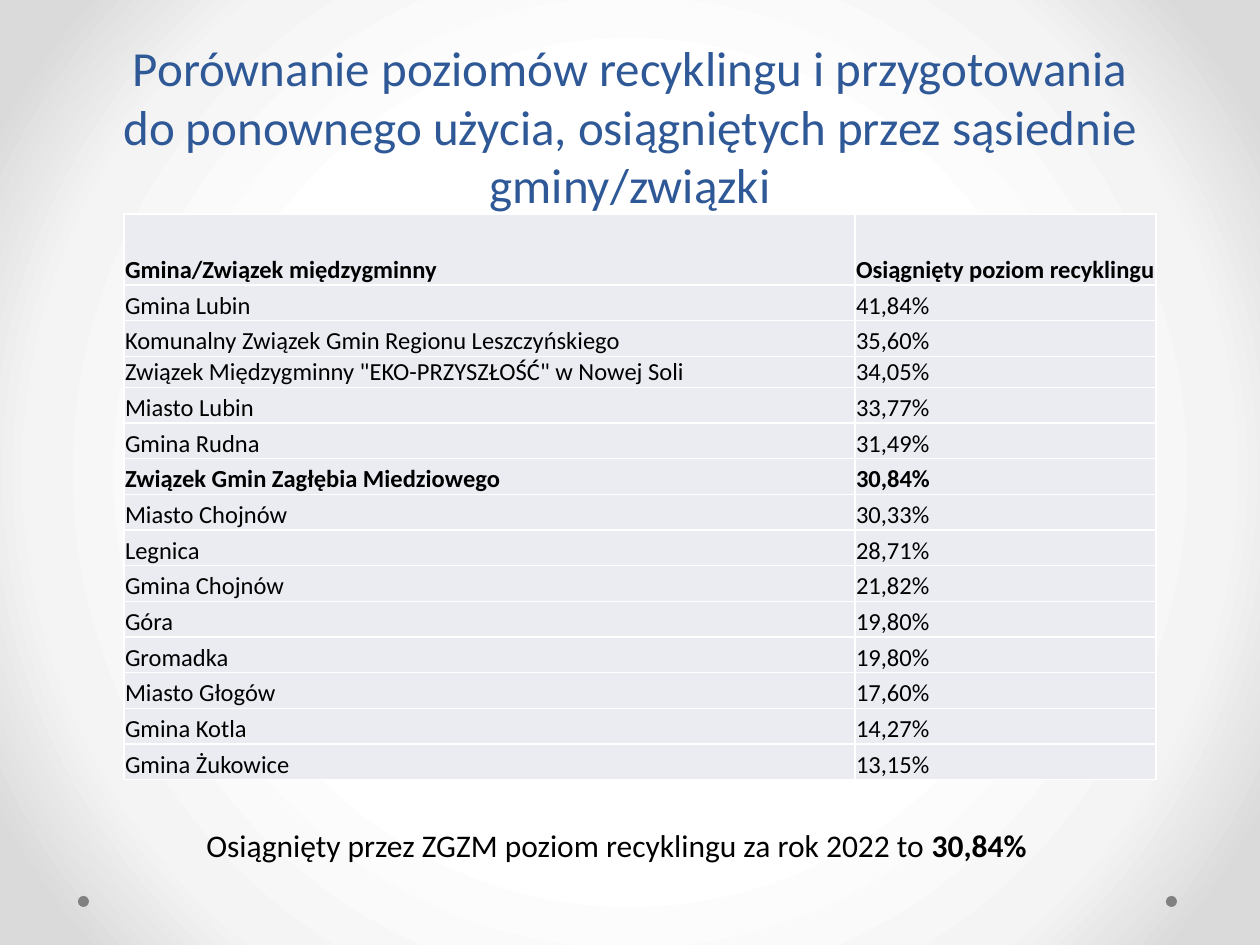
from lxml import etree
from pptx import Presentation
from pptx.dml.color import RGBColor
from pptx.enum.shapes import MSO_SHAPE
from pptx.enum.text import MSO_ANCHOR, PP_ALIGN
from pptx.oxml import parse_xml
from pptx.oxml.ns import nsdecls, qn
from pptx.util import Emu, Pt

OVAL = MSO_SHAPE.OVAL
BOTTOM = MSO_ANCHOR.BOTTOM
CENTER = PP_ALIGN.CENTER

WHITE = RGBColor(0xFF, 0xFF, 0xFF)
LIGHT_GRAY = RGBColor(0xF4, 0xF4, 0xF4)
EDGE_GRAY = RGBColor(0xDA, 0xDA, 0xDA)
DOT_GRAY = RGBColor(0x80, 0x80, 0x80)
BLUE = RGBColor(0x2F, 0x58, 0x97)
BLACK = RGBColor(0x00, 0x00, 0x00)
CELL_FILL = RGBColor(0xEA, 0xEC, 0xF2)

FONT = "Calibri"
EMU_PER_PX = 914400 / 126
GRADIENT = ((50, WHITE), (76, LIGHT_GRAY), (92, EDGE_GRAY))

TITLE_LINES = (
    "Porównanie poziomów recyklingu i przygotowania",
    "do ponownego użycia, osiągniętych przez sąsiednie gminy/związki",
)
HEADER = ("Gmina/Związek międzygminny", "Osiągnięty poziom recyklingu")
OWN_UNION = "Związek Gmin Zagłębia Miedziowego"
OWN_LEVEL = "30,84%"
RESULTS = (
    ("Gmina Lubin", "41,84%"),
    ("Komunalny Związek Gmin Regionu Leszczyńskiego", "35,60%"),
    ('Związek Międzygminny "EKO-PRZYSZŁOŚĆ" w Nowej Soli', "34,05%"),
    ("Miasto Lubin", "33,77%"),
    ("Gmina Rudna", "31,49%"),
    (OWN_UNION, OWN_LEVEL),
    ("Miasto Chojnów", "30,33%"),
    ("Legnica", "28,71%"),
    ("Gmina Chojnów", "21,82%"),
    ("Góra", "19,80%"),
    ("Gromadka", "19,80%"),
    ("Miasto Głogów", "17,60%"),
    ("Gmina Kotla", "14,27%"),
    ("Gmina Żukowice", "13,15%"),
)
COLUMN_WIDTHS = (731, 301)
TABLE_HEIGHT = 566
HEADER_HEIGHT = 71
SHORT_HEIGHT = 31
SHORT_ROW = 3


def px(length):
    return Emu(round(length * EMU_PER_PX))


def set_background(slide):
    stops = "".join(
        f'<a:gs pos="{position * 1000}"><a:srgbClr val="{color}"/></a:gs>'
        for position, color in GRADIENT
    )
    fill = slide.background.fill
    fill.gradient()
    properties = slide.background._cSld.bg.bgPr
    gradient = parse_xml(
        f'<a:gradFill {nsdecls("a")} rotWithShape="1"><a:gsLst>{stops}</a:gsLst>'
        '<a:path path="circle"><a:fillToRect l="50000" t="50000" r="50000" b="50000"/>'
        "</a:path></a:gradFill>"
    )
    properties.replace(properties.find(qn("a:gradFill")), gradient)


def add_dot(slide, left):
    shape = slide.shapes.add_shape(OVAL, px(left), px(896), px(11), px(11))
    shape.shadow.inherit = False
    shape.fill.solid()
    shape.fill.fore_color.rgb = DOT_GRAY
    shape.line.fill.background()


def add_run(paragraph, text, size, color=BLACK, bold=False):
    run = paragraph.add_run()
    run.text = text
    run.font.name = FONT
    run.font.size = Pt(size)
    run.font.bold = bold
    run.font.color.rgb = color


def add_title(slide):
    shape = slide.shapes.add_textbox(px(63), px(0), px(1134), px(220))
    frame = shape.text_frame
    frame.word_wrap = True
    frame.vertical_anchor = BOTTOM
    paragraph = frame.paragraphs[0]
    paragraph.alignment = CENTER
    first, second = TITLE_LINES
    add_run(paragraph, first, 28, BLUE)
    paragraph.add_line_break()
    add_run(paragraph, second, 28, BLUE)


def set_borders(cell):
    properties = cell._tc.get_or_add_tcPr()
    for index, side in enumerate(("lnL", "lnR", "lnT", "lnB")):
        line = etree.Element(qn(f"a:{side}"), w=str(Pt(1)))
        fill = etree.SubElement(line, qn("a:solidFill"))
        etree.SubElement(fill, qn("a:srgbClr"), val=str(WHITE))
        properties.insert(index, line)


def fill_cell(cell, text, bold):
    cell.margin_left = cell.margin_right = cell.margin_top = px(1)
    cell.margin_bottom = px(0)
    cell.vertical_anchor = BOTTOM
    cell.fill.solid()
    cell.fill.fore_color.rgb = CELL_FILL
    set_borders(cell)
    add_run(cell.text_frame.paragraphs[0], text, 14, bold=bold)


def add_results_table(slide):
    rows = (HEADER, *RESULTS)
    table = slide.shapes.add_table(
        len(rows), len(HEADER), px(124), px(214), px(sum(COLUMN_WIDTHS)), px(TABLE_HEIGHT)
    ).table
    for column, width in zip(table.columns, COLUMN_WIDTHS):
        column.width = px(width)
    special_heights = {0: HEADER_HEIGHT, SHORT_ROW: SHORT_HEIGHT}
    regular_height = (TABLE_HEIGHT - HEADER_HEIGHT - SHORT_HEIGHT) / (len(rows) - 2)
    for row_index, values in enumerate(rows):
        table.rows[row_index].height = px(special_heights.get(row_index, regular_height))
        bold = values[0] in (HEADER[0], OWN_UNION)
        for column_index, text in enumerate(values):
            fill_cell(table.cell(row_index, column_index), text, bold)


def add_summary(slide):
    shape = slide.shapes.add_textbox(px(194), px(820), px(854), px(51))
    shape.text_frame.word_wrap = False
    paragraph = shape.text_frame.paragraphs[0]
    add_run(paragraph, "Osiągnięty przez ZGZM poziom recyklingu za rok 2022 to ", 18)
    add_run(paragraph, OWN_LEVEL, 18, bold=True)


def main():
    presentation = Presentation()
    presentation.slide_width = px(1260)
    presentation.slide_height = px(945)
    slide = presentation.slides.add_slide(presentation.slide_layouts[6])
    set_background(slide)
    for left in (1166, 78):
        add_dot(slide, left)
    add_title(slide)
    add_results_table(slide)
    add_summary(slide)
    presentation.save("out.pptx")


if __name__ == "__main__":
    main()
